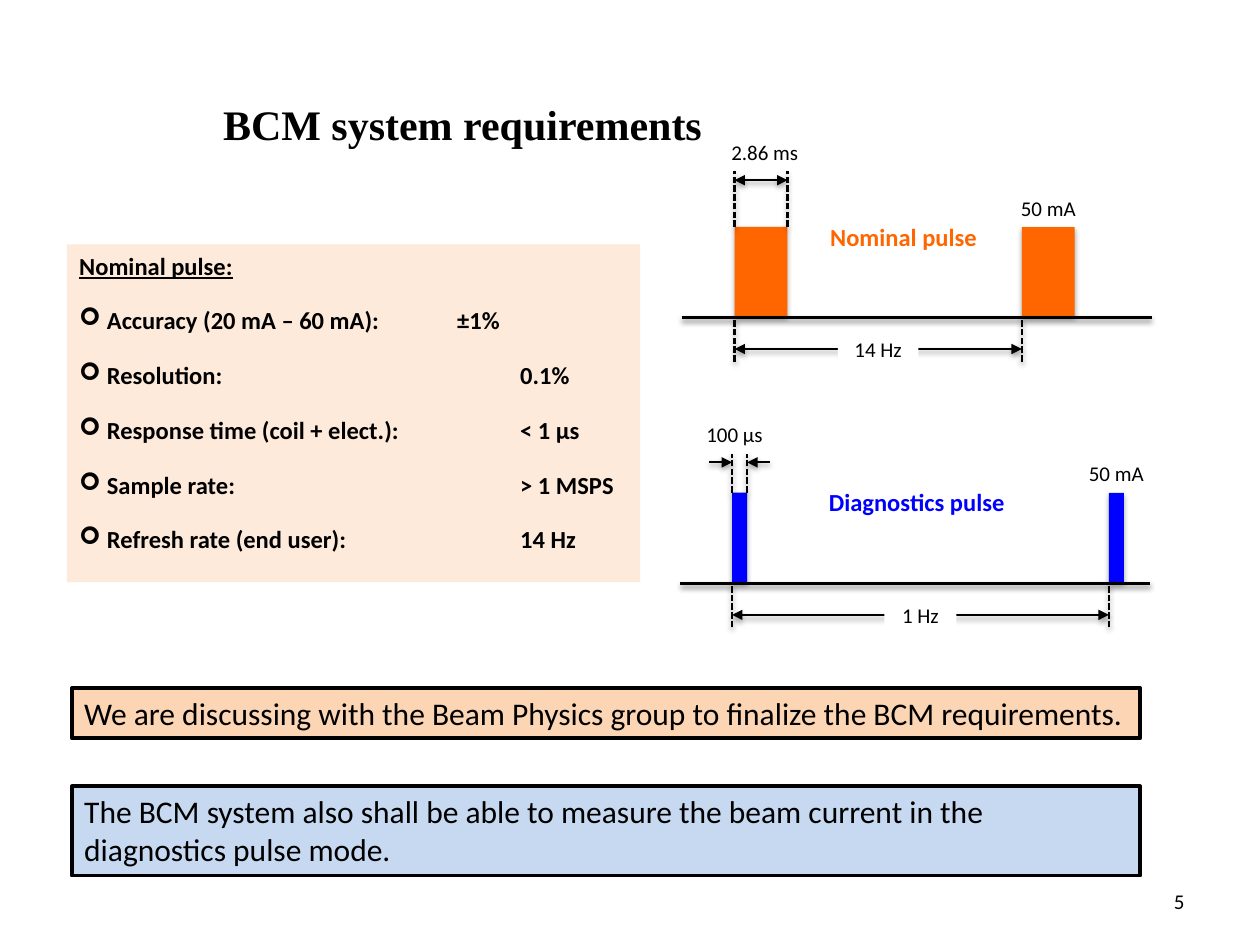
from lxml import etree
from pptx import Presentation
from pptx.dml.color import RGBColor
from pptx.enum import dml, shapes, text
from pptx.oxml import parse_xml
from pptx.oxml.ns import nsdecls, qn
from pptx.util import Inches, Pt

BLACK, WHITE = "000000", "FFFFFF"
LEFT, CENTER, RIGHT = text.PP_ALIGN.LEFT, text.PP_ALIGN.CENTER, text.PP_ALIGN.RIGHT
TOP, MIDDLE = text.MSO_ANCHOR.TOP, text.MSO_ANCHOR.MIDDLE


def color(value):
    return RGBColor.from_string(value)


def inches(*lengths):
    return [Inches(length) for length in lengths]


def style(font, **values):
    values = {"name": "Calibri", "size": 12, "color": BLACK} | values
    font.size = Pt(values.pop("size"))
    font.color.rgb = color(values.pop("color"))
    for key, value in values.items():
        setattr(font, key, value)


def drop_shadow(shape, alpha):
    """Put a soft shadow below the shape."""
    shape._element.spPr.append(parse_xml(
        f'<a:effectLst {nsdecls("a")}>'
        '<a:outerShdw blurRad="39370" dist="21590" dir="5400000" rotWithShape="0">'
        f'<a:srgbClr val="000000"><a:alpha val="{alpha * 1000}"/></a:srgbClr>'
        '</a:outerShdw></a:effectLst>'))


def rectangle(slide, box, fill, line=None):
    shape = slide.shapes.add_shape(shapes.MSO_SHAPE.RECTANGLE, *inches(*box))
    shape.fill.solid()
    shape.fill.fore_color.rgb = color(fill)
    if line:
        shape.line.color.rgb = color(line)
        shape.line.width = Pt(2)
    else:
        shape.line.fill.background()
    return shape


def write(shape, words, align=LEFT, anchor=TOP, **font):
    frame = shape.text_frame
    frame.word_wrap = True
    frame.vertical_anchor = anchor
    frame.text = words
    paragraph = frame.paragraphs[0]
    paragraph.alignment = align
    paragraph.space_before = Pt(0)
    style(paragraph.runs[0].font, **font)


def panel(slide, box, words, fill, line=None, **font):
    shape = rectangle(slide, box, fill, line)
    shape.shadow.inherit = False
    write(shape, words, **font)
    return shape


def line(slide, x1, y1, x2, y2, width=1.25, dashed=False, arrows=()):
    """Draw a line; arrows names its ends: headEnd is the start, tailEnd the end."""
    connector = slide.shapes.add_connector(
        shapes.MSO_CONNECTOR.STRAIGHT, *inches(x1, y1, x2, y2))
    connector.line.color.rgb = color(BLACK)
    connector.line.width = Pt(width)
    if dashed:
        connector.line.dash_style = dml.MSO_LINE.SQUARE_DOT
    for end in arrows:
        etree.SubElement(connector.line._get_or_add_ln(), qn(f"a:{end}"), type="triangle")
    drop_shadow(connector, 38)


def add_title(slide, box, words):
    title = slide.shapes.title
    title.left, title.top, title.width, title.height = inches(*box)
    write(title, words, anchor=MIDDLE, name="Times New Roman", size=24, bold=True)


def add_requirements(slide, box, heading, rows):
    """List each requirement with its value at a tab stop."""
    frame = panel(slide, box, heading, "FDEADA",
                  size=14, bold=True, underline=True).text_frame
    frame.paragraphs[0].space_after = Pt(12)
    indent = Inches(0.22)
    for name, value, stop in rows:
        paragraph = frame.add_paragraph()
        paragraph.alignment = LEFT
        paragraph.space_before, paragraph.space_after = Pt(2.5), Pt(12)
        properties = paragraph._p.get_or_add_pPr()
        properties.set("marL", str(indent))
        properties.set("indent", str(-indent))
        etree.SubElement(properties, qn("a:buFont"), typeface="Wingdings")
        etree.SubElement(properties, qn("a:buChar"), char="➢")
        tabs = etree.SubElement(properties, qn("a:tabLst"))
        etree.SubElement(tabs, qn("a:tab"), pos=str(Inches(stop)), algn="l")
        run = paragraph.add_run()
        run.text = f"{name}:\t{value}"
        style(run.font, size=14, bold=True)


def add_pulse_train(slide, box, name, fill, pulse_width, starts, duration,
                    period, name_width, period_width, duration_shift):
    """Draw two pulses on a baseline, with their duration, height and period."""
    left, top, width, height = box
    bottom = top + height
    baseline = bottom - 0.35
    pulse_top = baseline - 0.72
    first, second = (left + start for start in starts)
    first_end = first + pulse_width

    for start in (first, second):
        pulse = rectangle(slide, (start, pulse_top, pulse_width, 0.71), fill)
        drop_shadow(pulse, 35)
        line(slide, start, bottom, start, baseline, dashed=True)
    for edge in (first, first_end):
        line(slide, edge, pulse_top, edge, top + 0.3, dashed=True)
    line(slide, left, baseline, left + width, baseline, width=2)

    arrow_y = top + 0.37
    both = ("headEnd", "tailEnd")
    if pulse_width > 0.3:
        line(slide, first, arrow_y, first_end, arrow_y, arrows=both)
    else:
        for edge, outside in ((first, -0.18), (first_end, 0.18)):
            line(slide, edge, arrow_y, edge + outside, arrow_y, arrows=["headEnd"])
    line(slide, first, baseline + 0.25, second, baseline + 0.25, arrows=both)

    panel(slide, (left + 1.08, baseline - 0.81, name_width, 0.34), name, WHITE,
          size=14, bold=True, color=fill)
    panel(slide, ((first + second - period_width) / 2, baseline + 0.1, period_width, 0.3),
          period, WHITE, align=CENTER)
    panel(slide, (second + pulse_width / 2 - 0.32, pulse_top - 0.3, 0.64, 0.3),
          "50 mA", WHITE, align=CENTER)
    label = slide.shapes.add_textbox(
        *inches(first + pulse_width / 2 - 0.42 + duration_shift, top, 0.84, 0.3))
    write(label, duration, align=CENTER)


def add_slide_number(slide, box, number):
    label = slide.shapes.add_textbox(*inches(*box))
    write(label, number, align=RIGHT, anchor=MIDDLE)


def main():
    deck = Presentation()
    deck.slide_width, deck.slide_height = inches(10, 7.5)
    slide = deck.slides.add_slide(deck.slide_layouts[5])

    add_title(slide, (1.67, 0.73, 6.96, 0.5), "BCM system requirements")
    add_requirements(slide, (0.53, 1.94, 4.55, 2.68), "Nominal pulse:", [
        ("Accuracy (20 mA – 60 mA)", "±1%", 3),
        ("Resolution", "0.1%", 3.5),
        ("Response time (coil + elect.)", "< 1 μs", 3.5),
        ("Sample rate", "> 1 MSPS", 3.5),
        ("Refresh rate (end user)", "14 Hz", 3.5),
    ])
    add_pulse_train(slide, (5.41, 1.06, 3.73, 1.81), "Nominal pulse", "FF6600",
                    pulse_width=0.42, starts=(0.42, 2.7), duration="2.86 ms",
                    period="14 Hz", name_width=1.43, period_width=0.64,
                    duration_shift=0.03)
    add_pulse_train(slide, (5.4, 3.3, 3.73, 1.68), "Diagnostics pulse", "0000FF",
                    pulse_width=0.12, starts=(0.41, 3.4), duration="100 μs",
                    period="1 Hz", name_width=1.65, period_width=0.57,
                    duration_shift=-0.04)
    panel(slide, (0.57, 5.46, 8.48, 0.4),
          "We are discussing with the Beam Physics group to finalize the BCM requirements.",
          "FCD5B5", BLACK, size=18)
    panel(slide, (0.57, 6.24, 8.48, 0.71),
          "The BCM system also shall be able to measure the beam current in the "
          "diagnostics pulse mode.", "C6D9F1", BLACK, size=18)
    add_slide_number(slide, (7.17, 6.95, 2.33, 0.4), "5")
    deck.save("out.pptx")


if __name__ == "__main__":
    main()
